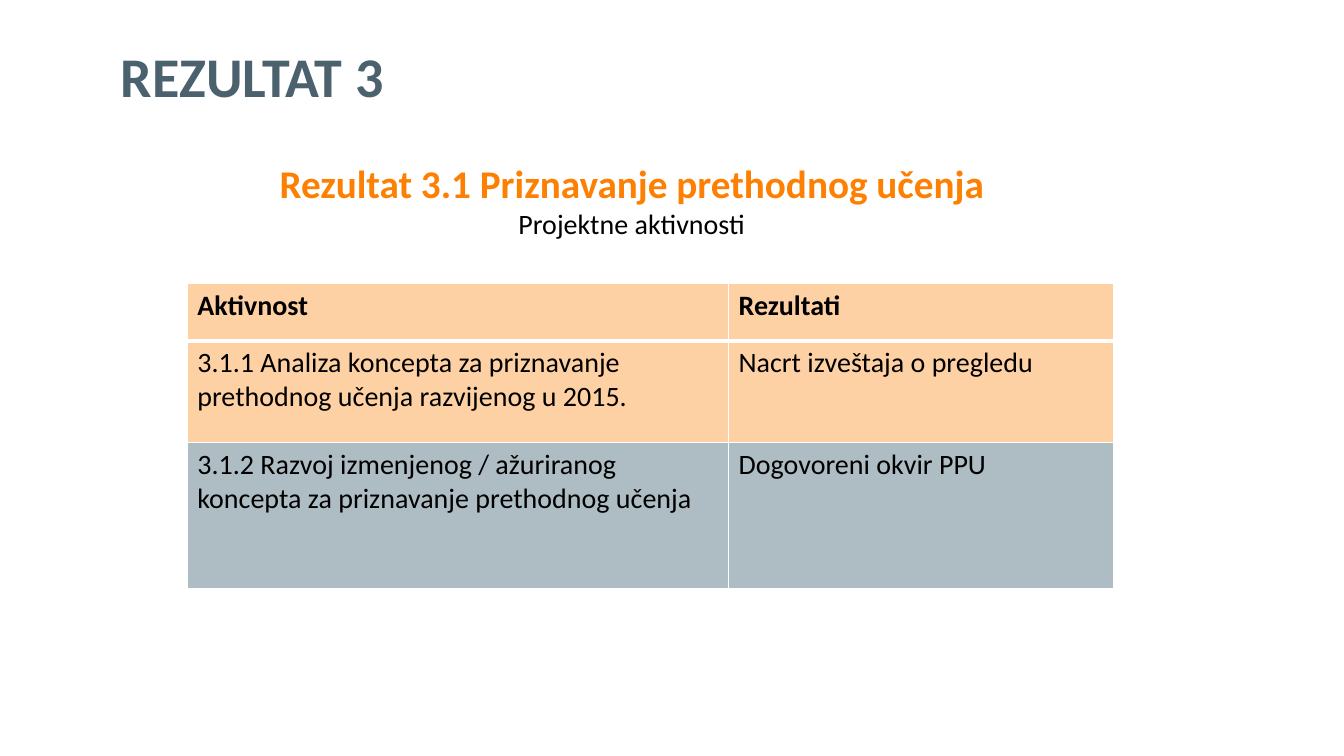
from lxml.etree import SubElement
from pptx import Presentation
from pptx.dml.color import RGBColor
from pptx.enum.text import MSO_ANCHOR as ANCHOR, MSO_AUTO_SIZE as AUTO, PP_ALIGN as ALIGN
from pptx.oxml.ns import qn
from pptx.util import Cm, Pt

FONT = "Calibri"
SLATE, ORANGE, BLACK, WHITE = "4B616D", "FD8003", "000000", "FFFFFF"
# Fill colour and opacity in percent
PEACH, GREY = ("FEAB58", 54), ("5F7B8B", 50)
COLUMN_WIDTHS = (13.64, 9.7)
ROWS = [
    (1.45, PEACH, ("Aktivnost", "Rezultati")),
    (2.57, PEACH, ("3.1.1 Analiza koncepta za priznavanje prethodnog učenja razvijenog u 2015.",
                   "Nacrt izveštaja o pregledu")),
    (3.68, GREY, ("3.1.2 Razvoj izmenjenog / ažuriranog koncepta za priznavanje prethodnog učenja",
                  "Dogovoreni okvir PPU")),
]


def rgb(color):
    return RGBColor.from_string(color)


def format_text(p, size, color, bold=False):
    for r in p.runs:
        r.font.name = FONT
        r.font.size = Pt(size)
        r.font.bold = bold
        r.font.color.rgb = rgb(color)


def add_title(s, left, top, width, height):
    sp = s.shapes.title
    sp.left, sp.top, sp.width, sp.height = Cm(left), Cm(top), Cm(width), Cm(height)
    tf = sp.text_frame
    tf.text = "REZULTAT 3"
    tf.auto_size = AUTO.NONE
    tf.vertical_anchor = ANCHOR.MIDDLE
    p = tf.paragraphs[0]
    p.alignment = ALIGN.LEFT
    p.line_spacing = 0.9
    format_text(p, 40, SLATE, True)


def add_heading(s, left, top, width, height):
    tf = s.shapes.add_textbox(Cm(left), Cm(top), Cm(width), Cm(height)).text_frame
    tf.word_wrap = True
    tf.auto_size = AUTO.SHAPE_TO_FIT_TEXT
    tf.text = "Rezultat 3.1 Priznavanje prethodnog učenja\nProjektne aktivnosti"
    for p in tf.paragraphs:
        p.alignment = ALIGN.CENTER
    format_text(tf.paragraphs[0], 28, ORANGE, True)
    format_text(tf.paragraphs[1], 20, BLACK)


def set_borders(cell, top, bottom):
    """Draw white cell borders; top and bottom widths are in points."""
    tc_pr = cell._tc.get_or_add_tcPr()
    for side, width in (("L", 1), ("R", 1), ("T", top), ("B", bottom)):
        ln = SubElement(tc_pr, qn("a:ln" + side), w=str(Pt(width)))
        fill = SubElement(ln, qn("a:solidFill"))
        SubElement(fill, qn("a:srgbClr"), val=WHITE)


def set_fill(cell, color, opacity):
    cell.fill.solid()
    cell.fill.fore_color.rgb = rgb(color)
    clr = cell._tc.tcPr.find(qn("a:solidFill")).find(qn("a:srgbClr"))
    SubElement(clr, qn("a:alpha"), val=str(opacity * 1000))


def add_activities(s, left, top):
    width, height = sum(COLUMN_WIDTHS), sum(row[0] for row in ROWS)
    table = s.shapes.add_table(len(ROWS), len(COLUMN_WIDTHS), Cm(left), Cm(top),
                               Cm(width), Cm(height)).table
    table.horz_banding = False
    for column, column_width in zip(table.columns, COLUMN_WIDTHS):
        column.width = Cm(column_width)
    for i, (row_height, fill, texts) in enumerate(ROWS):
        header = i == 0
        table.rows[i].height = Cm(row_height)
        for j, text in enumerate(texts):
            cell = table.cell(i, j)
            set_borders(cell, top=3 if i == 1 else 1, bottom=3 if header else 1)
            set_fill(cell, *fill)
            cell.text_frame.text = text
            p = cell.text_frame.paragraphs[0]
            if header:
                p.space_after = Pt(6)
            format_text(p, 20, BLACK, header)


def main():
    prs = Presentation()
    prs.slide_width, prs.slide_height = Cm(33.87), Cm(19.05)
    s = prs.slides.add_slide(prs.slide_layouts[5])
    add_title(s, 2.79, 1.4, 26.26, 1.22)
    add_activities(s, 4.72, 7.14)
    add_heading(s, 2.79, 3.89, 26.26, 2.31)
    prs.save("out.pptx")


if __name__ == "__main__":
    main()
